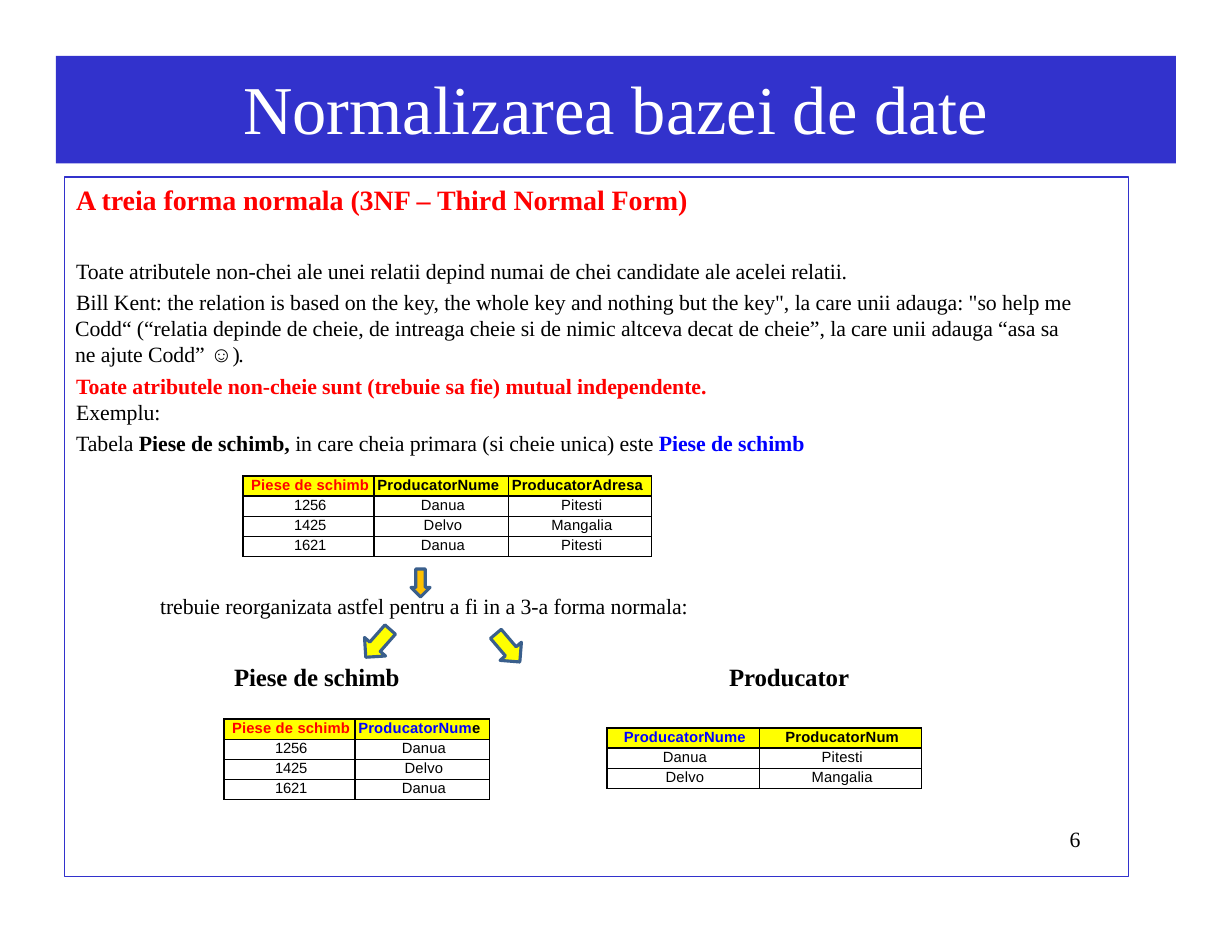
from lxml import etree
from pptx import Presentation
from pptx import util as u
from pptx.dml.color import RGBColor
from pptx.enum import shapes, text
from pptx.oxml.ns import qn

COLORS = {
    "banner": "3232CC", "white": "FFFFFF", "black": "000000", "red": "FF0000",
    "blue": "0000FF", "yellow": "FFFF00", "orange": "FFC000", "outline": "3A5F8C",
}
SERIF, SANS = "Times New Roman", "Arial"
LEFT, CENTER = text.PP_ALIGN.LEFT, text.PP_ALIGN.CENTER


def rgb(name):
    return RGBColor.from_string(COLORS[name])


def add_run(p, content, size=14, font=SERIF, color="black", bold=False, spacing=-5):
    r = p.add_run()
    r.text = content
    r.font.size = u.Pt(size)
    r.font.name = font
    r.font.bold = bold
    r.font.color.rgb = rgb(color)
    r._r.get_or_add_rPr().set("spc", str(spacing))


def format_paragraph(p, align=LEFT, before=0, line=None, left=0, indent=0):
    p.alignment = align
    p.space_before = u.Pt(before)
    if line:
        p.line_spacing = u.Pt(line)
    pPr = p._p.get_or_add_pPr()
    pPr.set("marL", str(u.Inches(left)))
    pPr.set("indent", str(u.Inches(indent)))


class SlideBuilder:
    def __init__(self, prs):
        self.slide = prs.slides.add_slide(prs.slide_layouts[6])

    def fill_text(self, tf, paragraphs, top=0):
        tf.word_wrap = True
        tf.vertical_anchor = text.MSO_ANCHOR.TOP
        tf.margin_left = tf.margin_right = tf.margin_bottom = 0
        tf.margin_top = u.Inches(top)
        for i, (style, runs) in enumerate(paragraphs):
            p = tf.add_paragraph() if i else tf.paragraphs[0]
            format_paragraph(p, **style)
            for content, look in runs:
                add_run(p, content, **look)

    def shape(self, kind, box, fill=None, line=None, width=2, rotation=0):
        sp = self.slide.shapes.add_shape(kind, *map(u.Inches, box))
        sp.shadow.inherit = False
        sp.rotation = rotation
        if fill:
            sp.fill.solid()
            sp.fill.fore_color.rgb = rgb(fill)
        else:
            sp.fill.background()
        if line:
            sp.line.color.rgb = rgb(line)
            sp.line.width = u.Pt(width)
        else:
            sp.line.fill.background()
        return sp

    def textbox(self, box, paragraphs, top=0):
        sp = self.slide.shapes.add_textbox(*map(u.Inches, box))
        self.fill_text(sp.text_frame, paragraphs, top)

    def border(self, cell):
        tcPr = cell._tc.get_or_add_tcPr()
        for i, side in enumerate(("a:lnL", "a:lnR", "a:lnT", "a:lnB")):
            ln = etree.Element(qn(side), w=str(u.Pt(1)))
            fill = etree.SubElement(ln, qn("a:solidFill"))
            etree.SubElement(fill, qn("a:srgbClr"), val=COLORS["black"])
            tcPr.insert(i, ln)

    def table(self, left, top, widths, headers, rows, header_align=LEFT, row_height=0.18):
        count = len(rows) + 1
        table = self.slide.shapes.add_table(
            count, len(widths), u.Inches(left), u.Inches(top),
            u.Inches(sum(widths)), u.Inches(row_height * count)).table
        for column, width in zip(table.columns, widths):
            column.width = u.Inches(width)
        for row in table.rows:
            row.height = u.Inches(row_height)
        for c, runs in enumerate(headers):
            align = header_align if c else CENTER
            looks = [(t, dict(size=9.5, font=SANS, color=k, bold=True, spacing=10))
                     for t, k in runs]
            self.cell(table.cell(0, c), looks, align, 11.3, "yellow")
        for r, values in enumerate(rows, 1):
            for c, value in enumerate(values):
                spacing = -10 if value.isdigit() else 10
                look = dict(size=9.5, font=SANS, spacing=spacing)
                self.cell(table.cell(r, c), [(value, look)], CENTER, 11.1)

    def cell(self, cell, runs, align, line, fill=None):
        cell.margin_left = cell.margin_right = cell.margin_top = cell.margin_bottom = 0
        p = cell.text_frame.paragraphs[0]
        format_paragraph(p, align=align, line=line, left=0.03)
        for content, look in runs:
            add_run(p, content, **look)
        if fill:
            cell.fill.solid()
            cell.fill.fore_color.rgb = rgb(fill)
        else:
            cell.fill.background()
        self.border(cell)


def main():
    prs = Presentation()
    prs.slide_width, prs.slide_height = u.Inches(11), u.Inches(8.5)
    s = SlideBuilder(prs)
    rect, arrow = shapes.MSO_SHAPE.RECTANGLE, shapes.MSO_SHAPE.DOWN_ARROW

    banner = s.shape(rect, (0.5, 0.5, 10, 0.96), fill="banner")
    s.fill_text(banner.text_frame, [
        (dict(align=CENTER, before=6.6),
         [("Normalizarea bazei de date", dict(size=44, color="white"))]),
    ], top=0.09)
    s.shape(rect, (0.58, 1.58, 9.5, 6.25), line="banner", width=0.72)

    bold, red, blue = dict(bold=True), dict(color="red", bold=True), dict(color="blue", bold=True)
    s.textbox((0.67, 1.62, 8.98, 2.48), [
        (dict(before=0.9, left=0.01),
         [("A treia forma normala (3NF – Third Normal Form)", dict(size=18, **red))]),
        (dict(before=26.5, left=0.01),
         [("Toate atributele non-chei ale unei relatii depind numai de chei candidate "
           "ale acelei relatii.", {})]),
        (dict(before=3.4, indent=0.01),
         [("Bill Kent: the relation is based on the key, the whole key and nothing but "
           "the key\", la care unii adauga: \"so help me Codd“ (“relatia depinde de cheie, "
           "de intreaga cheie si de nimic altceva decat de cheie”, la care unii adauga "
           "“asa sa ne ajute Codd” ", {}),
          ("☺", dict(font=SANS, spacing=-90)), (").", dict(spacing=-90))]),
        (dict(before=3.4, left=0.01),
         [("Toate atributele non-cheie sunt (trebuie sa fie) mutual independente.", red)]),
        (dict(left=0.01), [("Exemplu:", {})]),
        (dict(before=3.4, left=0.01),
         [("Tabela ", {}), ("Piese de schimb, ", bold),
          ("in care cheia primara (si cheie unica) este ", {}), ("Piese de schimb", blue)]),
    ], top=0.01)
    s.textbox((9.51, 7.41, 0.18, 0.22), [(dict(left=0.04, line=14.4), [("6", {})])])

    parts = [("1256", "Danua", "Pitesti"), ("1425", "Delvo", "Mangalia"),
             ("1621", "Danua", "Pitesti")]
    producers = [row[1:] for row in parts[:2]]
    part_header = [("Piese de schimb", "red")]
    s.table(2.17, 4.25, (1.17, 1.2, 1.28),
            [part_header, [("ProducatorNume", "black")], [("ProducatorAdresa", "black")]], parts)
    s.table(2, 6.42, (1.17, 1.2),
            [part_header, [("ProducatorNum", "blue"), ("e", "black")]],
            [row[:2] for row in parts])
    s.textbox((1.42, 5.22, 6.83, 0.4), [
        (dict(before=5.1, left=0.01),
         [("trebuie reorganizata astfel pentru a fi in a 3-a forma normala:", {})]),
    ], top=0.07)
    for left, heading in ((2.09, "Piese de schimb"), (6.51, "Producator")):
        s.textbox((left, 5.91, 1.74, 0.26), [({}, [(heading, dict(size=16, bold=True))])])
    s.table(5.42, 6.5, (1.36, 1.45),
            [[("ProducatorNume", "blue")], [("ProducatorNum", "black")]],
            producers, header_align=CENTER)

    for box, fill, rotation in [
        ((3.67, 5.08, 0.17, 0.25), "orange", 0),
        ((3.25, 5.58, 0.25, 0.33), "yellow", 41.4),
        ((4.41, 5.62, 0.25, 0.33), "yellow", 319.6),
    ]:
        s.shape(arrow, box, fill=fill, line="outline", rotation=rotation)
    prs.save("out.pptx")


if __name__ == "__main__":
    main()
